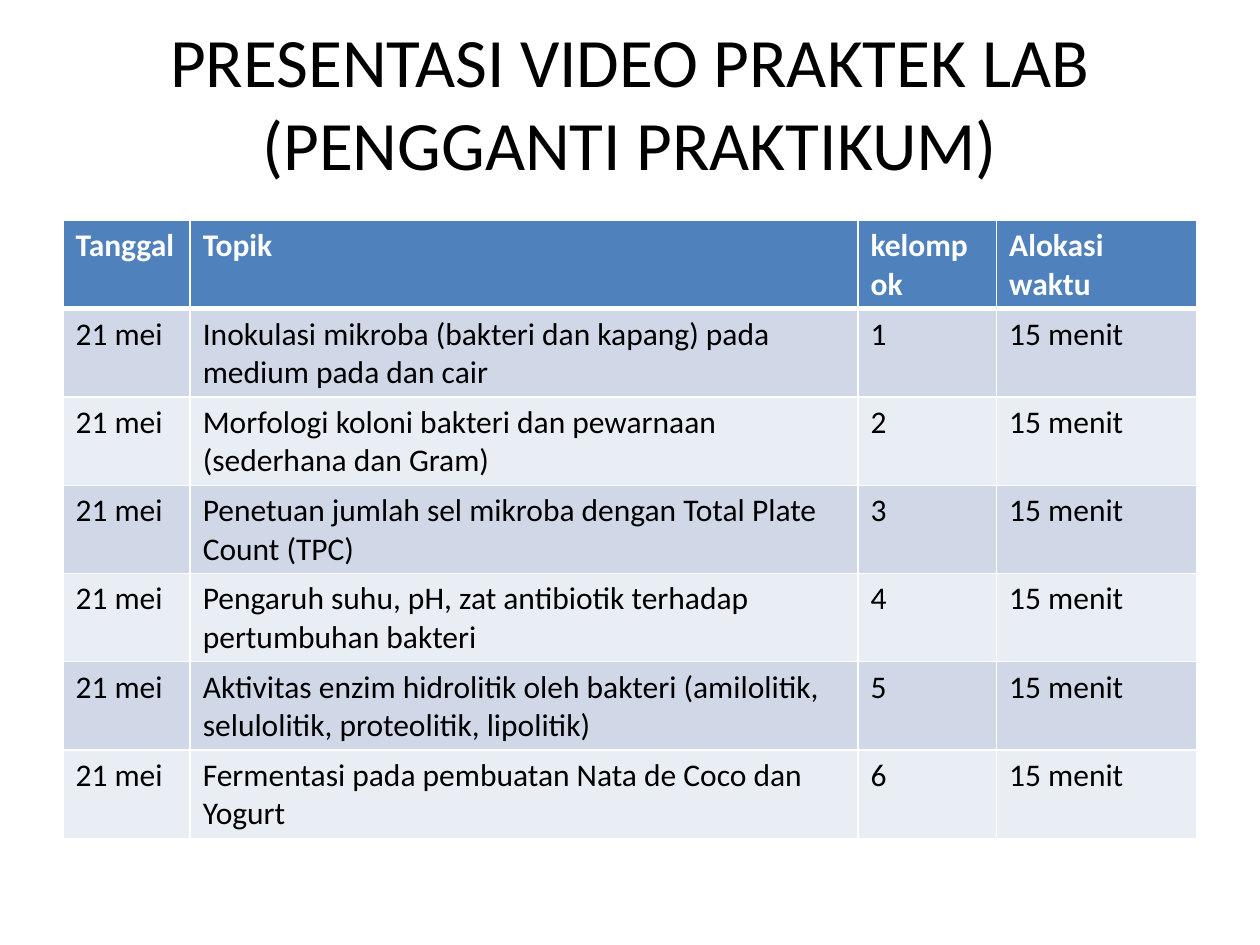
from lxml.etree import SubElement
from pptx import Presentation
from pptx.dml.color import RGBColor
from pptx.enum.text import MSO_ANCHOR, PP_ALIGN
from pptx.oxml.ns import qn
from pptx.util import Inches, Pt

TITLE = "PRESENTASI VIDEO PRAKTEK LAB (PENGGANTI PRAKTIKUM)"
HEADERS = ["Tanggal", "Topik", "kelompok", "Alokasi waktu"]
DATE, DURATION = "21 mei", "15 menit"
TOPICS = [
    "Inokulasi mikroba (bakteri dan kapang) pada medium pada dan cair",
    "Morfologi koloni bakteri dan pewarnaan (sederhana dan Gram)",
    "Penetuan jumlah sel mikroba dengan Total Plate Count (TPC)",
    "Pengaruh suhu, pH, zat antibiotik terhadap pertumbuhan bakteri",
    "Aktivitas enzim hidrolitik oleh bakteri (amilolitik, selulolitik, proteolitik, lipolitik)",
    "Fermentasi pada pembuatan Nata de Coco dan Yogurt",
]
COLUMN_WIDTHS = [1.01, 5.3, 1.1, 1.59]
ROW_HEIGHT = 0.7
COLORS = {
    "text": "000000",
    "white": "FFFFFF",
    "header": "4F81BD",
    "odd": "D0D8E8",
    "even": "E9EDF4",
}


def write(frame, text, size=18, color="text", bold=False, align=PP_ALIGN.LEFT):
    para = frame.paragraphs[0]
    para.alignment = align
    span = para.add_run()
    span.text = text
    span.font.name = "Calibri"
    span.font.size = Pt(size)
    span.font.bold = bold
    span.font.color.rgb = RGBColor.from_string(COLORS[color])


def add_borders(cell, **widths):
    """Draw white cell borders; widths are points by side L, R, T, B."""
    properties = cell._tc.get_or_add_tcPr()
    for side, width in widths.items():
        line = SubElement(properties, qn(f"a:ln{side}"), w=str(Pt(width)))
        fill = SubElement(line, qn("a:solidFill"))
        SubElement(fill, qn("a:srgbClr"), val=COLORS["white"])


def add_title(page):
    box = page.shapes.add_textbox(Inches(0.5), Inches(0.3), Inches(9), Inches(1.01))
    frame = box.text_frame
    frame.word_wrap = True
    frame.vertical_anchor = MSO_ANCHOR.MIDDLE
    write(frame, TITLE, size=39.6, align=PP_ALIGN.CENTER)


def add_schedule(page):
    rows = [HEADERS] + [
        [DATE, topic, str(group), DURATION] for group, topic in enumerate(TOPICS, 1)
    ]
    table = page.shapes.add_table(
        len(rows), len(HEADERS), Inches(0.5), Inches(1.75),
        Inches(sum(COLUMN_WIDTHS)), Inches(ROW_HEIGHT * len(rows)),
    ).table
    for column, width in zip(table.columns, COLUMN_WIDTHS):
        column.width = Inches(width)
    for r, row in enumerate(rows):
        header = r == 0
        fill = "header" if header else "odd" if r % 2 else "even"
        for c, text in enumerate(row):
            cell = table.cell(r, c)
            add_borders(cell, L=1, R=1, T=3 if r == 1 else 1, B=3 if header else 1)
            cell.fill.solid()
            cell.fill.fore_color.rgb = RGBColor.from_string(COLORS[fill])
            write(cell.text_frame, text, color="white" if header else "text", bold=header)


def main():
    deck = Presentation()
    deck.slide_width, deck.slide_height = Inches(10), Inches(7.5)
    page = deck.slides.add_slide(deck.slide_layouts[6])
    add_title(page)
    add_schedule(page)
    deck.save("out.pptx")


if __name__ == "__main__":
    main()
